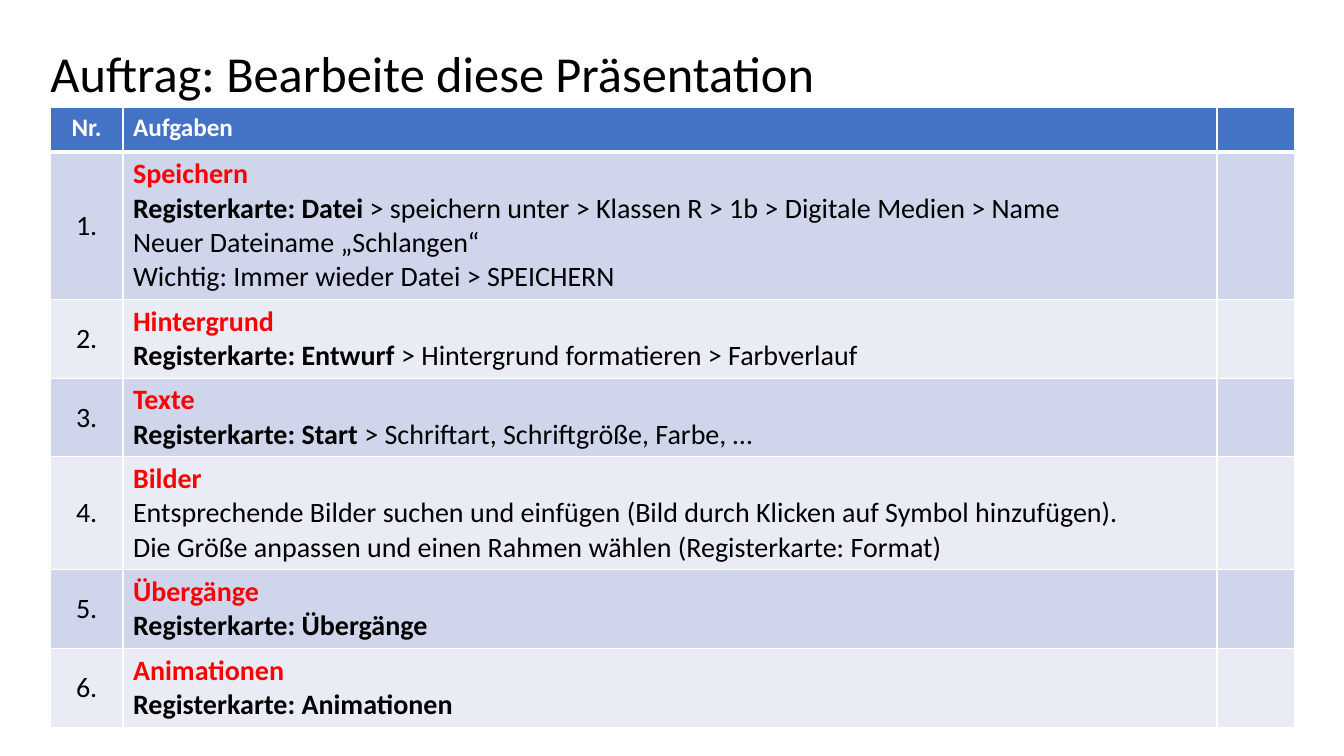
import pptx
import pptx.dml.color
import pptx.enum.text
import pptx.oxml
import pptx.oxml.ns
import pptx.util

Inches = pptx.util.Inches
Pt = pptx.util.Pt
RGBColor = pptx.dml.color.RGBColor
Align = pptx.enum.text.PP_ALIGN
Anchor = pptx.enum.text.MSO_ANCHOR

BLACK = RGBColor(0x00, 0x00, 0x00)
WHITE = RGBColor(0xFF, 0xFF, 0xFF)
RED = RGBColor(0xFF, 0x00, 0x00)
BLUE = RGBColor(0x44, 0x72, 0xC4)
BANDS = [RGBColor(0xCF, 0xD5, 0xEA), RGBColor(0xE9, 0xEB, 0xF5)]

TITLE = {"size": Pt(36), "bold": False}
HEADER = {"size": Pt(18), "bold": True}
PLAIN = {"size": Pt(20), "bold": False}
STRONG = {"size": Pt(20), "bold": True}

COLUMN_WIDTHS = [0.72, 10.85, 0.77]
ROW_HEIGHTS = [0.44, 1.45, 0.78, 0.78, 1.12, 0.78, 0.78]

TASKS = [
    ("Speichern", [
        ("Registerkarte: Datei", " > speichern unter > Klassen R > 1b > Digitale Medien > Name"),
        ("", "Neuer Dateiname „Schlangen“"),
        ("", "Wichtig: Immer wieder Datei > SPEICHERN"),
    ]),
    ("Hintergrund", [("Registerkarte: Entwurf ", "> Hintergrund formatieren > Farbverlauf")]),
    ("Texte", [("Registerkarte: Start", " > Schriftart, Schriftgröße, Farbe, …")]),
    ("Bilder", [
        ("", "Entsprechende Bilder suchen und einfügen (Bild durch Klicken auf Symbol hinzufügen)."),
        ("", "Die Größe anpassen und einen Rahmen wählen (Registerkarte: Format)"),
    ]),
    ("Übergänge", [("Registerkarte: Übergänge", "")]),
    ("Animationen", [("Registerkarte: Animationen", "")]),
]


class TaskPage:
    def __init__(self, deck, font_name):
        self.font_name = font_name
        self.page = deck.slides.add_slide(deck.slide_layouts[5])

    def fill_text(self, frame, lines, align=Align.LEFT):
        for index, spans in enumerate(lines):
            para = frame.paragraphs[0] if index == 0 else frame.add_paragraph()
            para.alignment = align
            for text, style, color in spans:
                if not text:
                    continue
                span = para.add_run()
                span.text = text
                span.font.name = self.font_name
                span.font.color.rgb = color
                for name, value in style.items():
                    setattr(span.font, name, value)

    def title(self, text, left, top, width, height):
        box = self.page.shapes.title
        place = {"left": left, "top": top, "width": width, "height": height}
        for name, value in place.items():
            setattr(box, name, Inches(value))
        frame = box.text_frame
        layout = {
            "margin_left": 0, "margin_right": 0, "margin_top": 0, "margin_bottom": 0,
            "word_wrap": True, "vertical_anchor": Anchor.MIDDLE,
            "auto_size": pptx.enum.text.MSO_AUTO_SIZE.NONE,
        }
        for name, value in layout.items():
            setattr(frame, name, value)
        self.fill_text(frame, [[(text, TITLE, BLACK)]])

    def table(self, left, top, widths, heights):
        grid = self.page.shapes.add_table(
            len(heights), len(widths), Inches(left), Inches(top),
            Inches(sum(widths)), Inches(sum(heights))).table
        for column, width in zip(grid.columns, widths):
            column.width = Inches(width)
        for row, height in zip(grid.rows, heights):
            row.height = Inches(height)
        return grid

    def cell(self, cell, fill, lines, align=Align.LEFT, anchor=Anchor.MIDDLE, edges=None):
        self.borders(cell, edges or {})
        cell.fill.solid()
        cell.fill.fore_color.rgb = fill
        cell.vertical_anchor = anchor
        self.fill_text(cell.text_frame, lines, align)

    def borders(self, cell, edges):
        properties = cell._tc.get_or_add_tcPr()
        for edge in ("lnL", "lnR", "lnT", "lnB"):
            width = Pt(edges.get(edge, 1))
            properties.append(pptx.oxml.parse_xml(
                f'<a:{edge} {pptx.oxml.ns.nsdecls("a")} w="{width}">'
                f'<a:solidFill><a:srgbClr val="{WHITE}"/></a:solidFill></a:{edge}>'))


def main():
    deck = pptx.Presentation()
    deck.slide_width = Inches(13.33)
    deck.slide_height = Inches(7.5)
    page = TaskPage(deck, "Calibri")
    page.title("Auftrag: Bearbeite diese Präsentation", 0.5, 0.37, 12.34, 0.7)
    grid = page.table(0.5, 1.07, COLUMN_WIDTHS, ROW_HEIGHTS)

    headings = [("Nr.", Align.CENTER), ("Aufgaben", Align.LEFT), ("", Align.LEFT)]
    for column, (text, align) in enumerate(headings):
        page.cell(grid.cell(0, column), BLUE, [[(text, HEADER, WHITE)]],
                  align, Anchor.TOP, {"lnB": 3})

    for number, (name, steps) in enumerate(TASKS, 1):
        fill = BANDS[(number - 1) % 2]
        edges = {"lnT": 3} if number == 1 else {}
        lines = [[(name, STRONG, RED)]]
        lines += [[(lead, STRONG, BLACK), (rest, PLAIN, BLACK)] for lead, rest in steps]
        page.cell(grid.cell(number, 0), fill, [[(f"{number}.", PLAIN, BLACK)]],
                  Align.CENTER, edges=edges)
        page.cell(grid.cell(number, 1), fill, lines, edges=edges)
        page.cell(grid.cell(number, 2), fill, [], edges=edges)

    deck.save("out.pptx")


if __name__ == "__main__":
    main()
